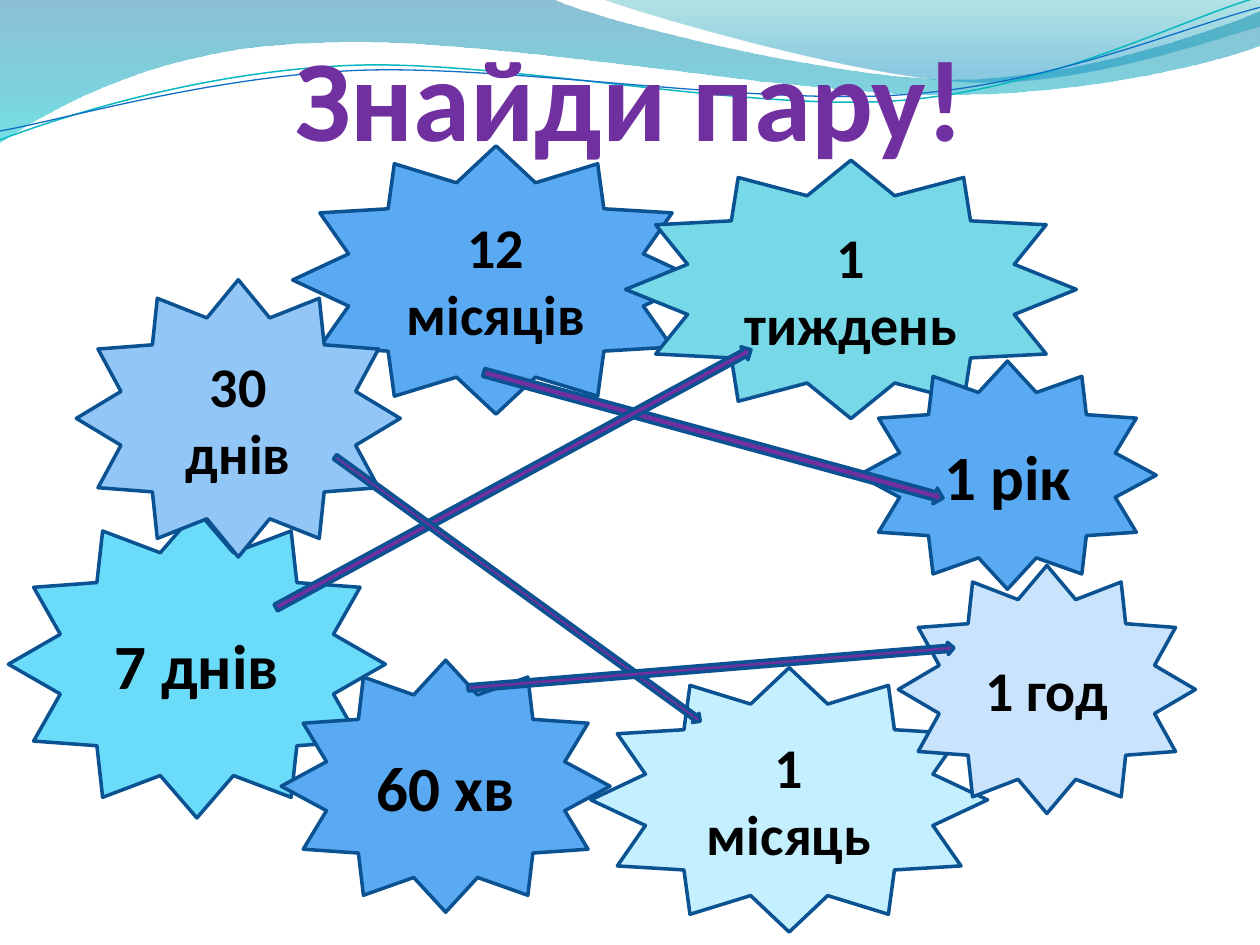
from dataclasses import dataclass

from lxml.etree import SubElement
from pptx import Presentation
from pptx.dml.color import RGBColor
from pptx.enum.shapes import MSO_SHAPE as SHAPE
from pptx.enum.text import MSO_ANCHOR as ANCHOR, PP_ALIGN as ALIGN
from pptx.oxml.ns import qn
from pptx.util import Cm, Pt

PURPLE, OUTLINE, BLUE = "7030A0", "0B5292", "59AAF2"


@dataclass
class Star:
    text: str
    box: tuple  # left, top, width, height in cm
    fill: str
    size: int = 32


@dataclass
class Arrow:
    box: tuple
    angle: float


@dataclass
class Wave:
    start: tuple
    segments: list  # (x, y) is a line, six numbers are a Bezier curve
    stops: tuple = ()  # (position, colour, opacity %)
    line: str = ""
    width: float = 0


WAVES = [
    Wave((0, 0), [(11.18, 0),
                  (12.09, 0.43, 16.87, 1.6, 19.25, 1.6),
                  (21.67, 1.6, 24.33, 0.66, 25.4, 0.23),
                  (25.4, 0.91),
                  (24.97, 1.12, 22.1, 1.93, 18.95, 1.91),
                  (15.8, 1.91, 9.7, 0.71, 6.53, 0.86),
                  (3.28, 0.91, 1.17, 2.11, 0, 2.87)],
         stops=((0, "0074A1", 45), (1, "00C6CF", 55))),
    Wave((12.17, 0), [(12.93, 0.28, 17.32, 1.57, 19.53, 1.65),
                      (21.74, 1.75, 24.41, 0.81, 25.4, 0.53),
                      (25.4, 0)],
         stops=((0, "00A1A9", 30), (0.8, "008BBF", 45))),
    Wave((0, 2.82), [(1.22, 2.36, 4.01, 1.45, 7.04, 1.32),
                     (10.03, 1.19, 15.06, 2.26, 18.11, 2.03),
                     (21.16, 1.8, 23.83, 0.38, 25.35, -0.05)],
         line="0AB8BF", width=0.85),
    Wave((0, 2.64), [(1.19, 2.44, 4.17, 1.55, 7.19, 1.42),
                     (10.24, 1.3, 15.16, 2.13, 18.21, 1.91),
                     (21.23, 1.7, 23.9, 0.53, 25.4, 0.15)],
         line="0F6FC6", width=0.75),
]

STARS = [
    Star("12 місяців", (5.9, 2.94, 8.2, 5.41), BLUE),
    Star("7 днів", (0.17, 10.29, 7.6, 6.2), "6BDBFA", 36),
    Star("1 тиждень", (12.61, 3.23, 9.09, 5.21), "77D9E8"),
    Star("30 днів", (1.54, 5.64, 6.53, 5.59), "91C6F7"),
    Star("1 рік", (17.31, 7.28, 6, 4.6), BLUE, 36),
    Star("1 місяць", (11.91, 13.46, 8, 5.33), "C4EFFF"),
    Star("60 хв", (5.67, 13.31, 6.63, 5.08), BLUE, 36),
    Star("1 год", (18.11, 11.4, 5.99, 5), "C8E3FB"),
]

ARROWS = [
    Arrow((9.58, 8.61, 9.6, 0.33), 15.3),
    Arrow((4.9, 9.5, 10.9, 0.3), 331.5),
    Arrow((5.89, 11.76, 9.09, 0.23), 35.9),
    Arrow((9.42, 13.34, 9.83, 0.25), 355.3),
]


def rgb(color: str) -> RGBColor:
    return RGBColor.from_string(color)


def write(tf, text: str, size: int, color: str) -> None:
    tf.word_wrap = True
    p = tf.paragraphs[0]
    p.alignment = ALIGN.CENTER
    r = p.add_run()
    r.text = text
    for name, value in dict(name="Calibri", size=Pt(size), bold=True).items():
        setattr(r.font, name, value)
    r.font.color.rgb = rgb(color)


def set_line(sp, color: str, width: float) -> None:
    sp.line.color.rgb = rgb(color)
    sp.line.width = Pt(width)


def bend(sp, segments: list) -> None:
    """Turn each curve's three straight steps into one cubic Bezier."""
    steps = iter(list(sp._element.spPr.iter(qn("a:lnTo"))))
    for segment in segments:
        first, *others = [next(steps) for _ in range(len(segment) // 2)]
        if others:
            first.tag = qn("a:cubicBezTo")
        for step in others:
            first.append(step[0])
            step.getparent().remove(step)


def add_wave(s, wave: Wave) -> None:
    points = [wave.start]
    for segment in wave.segments:
        points += zip(segment[::2], segment[1::2])
    emu = [(Cm(x), Cm(y)) for x, y in points]
    builder = s.shapes.build_freeform(*emu[0])
    builder.add_line_segments(emu[1:], close=bool(wave.stops))
    sp = builder.convert_to_shape()
    bend(sp, wave.segments)
    sp.shadow.inherit = False
    if not wave.stops:
        sp.fill.background()
        set_line(sp, wave.line, wave.width)
        return
    sp.fill.gradient()
    sp.fill.gradient_angle = 270
    for stop, (position, color, _) in zip(sp.fill.gradient_stops, wave.stops):
        stop.position = position
        stop.color.rgb = rgb(color)
    colors = sp._element.spPr.iter(qn("a:srgbClr"))
    for node, (_, _, opacity) in zip(list(colors), wave.stops):
        SubElement(node, qn("a:alpha")).set("val", str(opacity * 1000))
    sp.line.fill.background()


def add_outlined(s, kind, box: tuple, fill: str):
    sp = s.shapes.add_shape(kind, *map(Cm, box))
    sp.shadow.inherit = False
    sp.fill.solid()
    sp.fill.fore_color.rgb = rgb(fill)
    set_line(sp, OUTLINE, 2)
    return sp


def add_star(s, star: Star) -> None:
    sp = add_outlined(s, SHAPE.STAR_12_POINT, star.box, star.fill)
    sp.text_frame.vertical_anchor = ANCHOR.MIDDLE
    write(sp.text_frame, star.text, star.size, "000000")


def add_arrow(s, arrow: Arrow) -> None:
    sp = add_outlined(s, SHAPE.RIGHT_ARROW, arrow.box, PURPLE)
    sp.rotation = arrow.angle


def add_title(s, text: str) -> None:
    tf = s.shapes.add_textbox(*map(Cm, (1.27, 0.72, 22.86, 2.59))).text_frame
    frame = dict(margin_left=0, margin_top=Cm(0.13), margin_right=0,
                 margin_bottom=0, vertical_anchor=ANCHOR.BOTTOM)
    for name, value in frame.items():
        setattr(tf, name, value)
    write(tf, text, 66, PURPLE)


def main() -> None:
    prs = Presentation()
    prs.slide_width, prs.slide_height = Cm(25.4), Cm(19.05)
    s = prs.slides.add_slide(prs.slide_layouts[6])

    # Wavy header
    for wave in WAVES:
        add_wave(s, wave)

    add_title(s, "Знайди пару!")

    # Time spans and the arrows that pair them
    for star in STARS:
        add_star(s, star)
    for arrow in ARROWS:
        add_arrow(s, arrow)

    prs.save("out.pptx")


if __name__ == "__main__":
    main()
